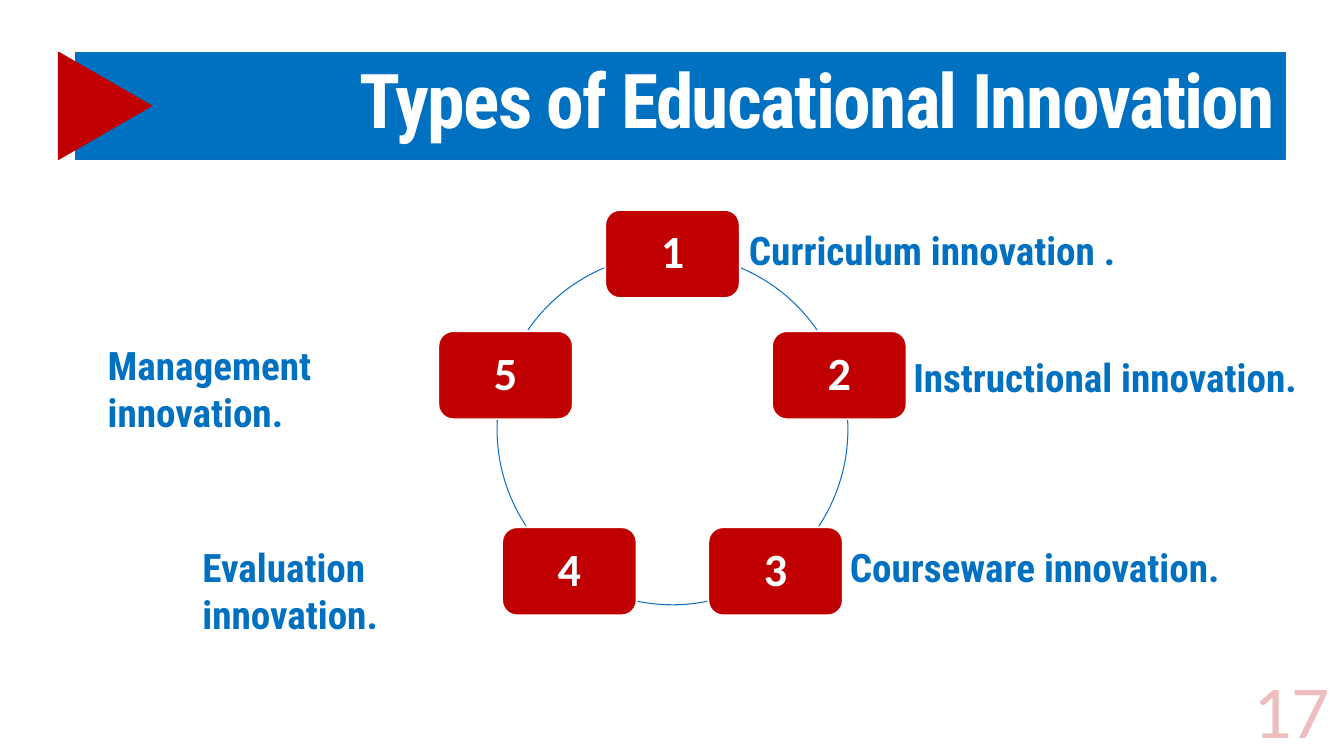
from math import cos, radians, sin

from lxml.etree import SubElement
from pptx import Presentation
from pptx.dml.color import RGBColor
from pptx.enum.shapes import MSO_SHAPE
from pptx.enum.text import MSO_ANCHOR, MSO_AUTO_SIZE, PP_ALIGN
from pptx.oxml.ns import qn
from pptx.util import Pt

PX = 9144  # 100 px to the inch
BLUE, RED, WHITE, LINE_BLUE = "0070C0", "C00000", "FFFFFF", "0F6FC6"
HEADING_FONT, NUMBER_FONT = "Roboto Condensed", "Calibri"

TITLE = "Types of Educational Innovation"
PAGE = "17"
# label, left, top, width
INNOVATIONS = [
    ("Curriculum innovation .", 733, 220, 533),
    ("Instructional innovation.", 896, 346, 420),
    ("Courseware innovation.", 833, 534, 453),
    ("Evaluation innovation.", 191, 534, 308),
    ("Management innovation.", 97, 334, 342),
]
LABEL_HEIGHT = 57

# Ring of numbered boxes; arc angles run clockwise from the top
CENTER_X, CENTER_Y, RADIUS = 667, 426, 174
BOX_WIDTH, BOX_HEIGHT = 133, 87
RIGHT_ARCS = [(23, 55.5), (87, 123.5)]
BOTTOM_ARC = (168.5, 191.5)
LEFT_ARCS = [(360 - end, 360 - start) for start, end in reversed(RIGHT_ARCS)]


def color(hex_string):
    return RGBColor.from_string(hex_string)


def px(*lengths):
    return [round(length * PX) for length in lengths]


def style_shape(shape, fill, line, line_width):
    """Set fill and outline; a fill of None leaves the shape empty."""
    shape.shadow.inherit = False
    if fill:
        shape.fill.solid()
        shape.fill.fore_color.rgb = color(fill)
    else:
        shape.fill.background()
    shape.line.color.rgb = color(line)
    shape.line.width = Pt(line_width)


def add_shape(slide, kind, box, fill, line, line_width):
    shape = slide.shapes.add_shape(kind, *px(*box))
    style_shape(shape, fill, line, line_width)
    return shape


def write(shape, text, size, font, hex_color, bold=True,
          align=PP_ALIGN.LEFT, anchor=MSO_ANCHOR.TOP):
    frame = shape.text_frame
    frame.text = text
    frame.word_wrap = True
    frame.vertical_anchor = anchor
    paragraph = frame.paragraphs[0]
    paragraph.alignment = align
    paragraph.font.size = Pt(size)
    paragraph.font.name = font
    paragraph.font.bold = bold
    paragraph.font.color.rgb = color(hex_color)
    return paragraph


def add_title(slide):
    title = slide.shapes.title
    title.left, title.top, title.width, title.height = px(75, 52, 1200, 106)
    title.fill.solid()
    title.fill.fore_color.rgb = color(BLUE)
    title.line.color.rgb = color(LINE_BLUE)
    title.line.width = Pt(0.75)
    heading = write(title, TITLE, 54, HEADING_FONT, WHITE,
                    align=PP_ALIGN.RIGHT, anchor=MSO_ANCHOR.MIDDLE)
    title.text_frame.auto_size = MSO_AUTO_SIZE.NONE
    heading.line_spacing = 0.85
    heading.runs[0].font._element.set("spc", "-120")
    pointer = add_shape(slide, MSO_SHAPE.ISOSCELES_TRIANGLE,
                        (51, 59, 106, 92), RED, RED, 1)
    pointer.rotation = 90


def add_ring(slide):
    ring = (CENTER_X - RADIUS, CENTER_Y - RADIUS, 2 * RADIUS, 2 * RADIUS)
    for angles in [*RIGHT_ARCS, BOTTOM_ARC, *LEFT_ARCS]:
        arc = add_shape(slide, MSO_SHAPE.ARC, ring, None, LINE_BLUE, 0.75)
        for index, angle in enumerate(angles):
            # presets count 60000ths of a degree from the right, in units of 100000
            arc.adjustments[index] = (angle - 90) % 360 * 0.6

    for index in range(len(INNOVATIONS)):
        angle = radians(index * 360 / len(INNOVATIONS) - 90)
        left = CENTER_X + RADIUS * cos(angle) - BOX_WIDTH / 2
        top = CENTER_Y + RADIUS * sin(angle) - BOX_HEIGHT / 2
        box = add_shape(slide, MSO_SHAPE.ROUNDED_RECTANGLE,
                        (left, top, BOX_WIDTH, BOX_HEIGHT), RED, WHITE, 1)
        number = write(box, str(index + 1), 33, NUMBER_FONT, WHITE,
                       align=PP_ALIGN.CENTER, anchor=MSO_ANCHOR.MIDDLE)
        number.line_spacing = 0.9


def add_labels(slide):
    for label, left, top, width in INNOVATIONS:
        box = slide.shapes.add_textbox(*px(left, top, width, LABEL_HEIGHT))
        write(box, label, 28, HEADING_FONT, BLUE)
        box.text_frame.auto_size = MSO_AUTO_SIZE.SHAPE_TO_FIT_TEXT


def add_page_number(slide):
    box = slide.shapes.add_textbox(*px(1009, 600, 320, 153))
    page = write(box, PAGE, 54, NUMBER_FONT, RED, bold=False,
                 align=PP_ALIGN.RIGHT, anchor=MSO_ANCHOR.BOTTOM)
    for tint in page._p.iter(qn("a:srgbClr")):
        SubElement(tint, qn("a:alpha")).set("val", "25000")


def main():
    presentation = Presentation()
    presentation.slide_width, presentation.slide_height = px(1333, 750)
    slide = presentation.slides.add_slide(presentation.slide_layouts[5])
    add_title(slide)
    add_ring(slide)
    add_labels(slide)
    add_page_number(slide)
    presentation.save("out.pptx")


if __name__ == "__main__":
    main()
